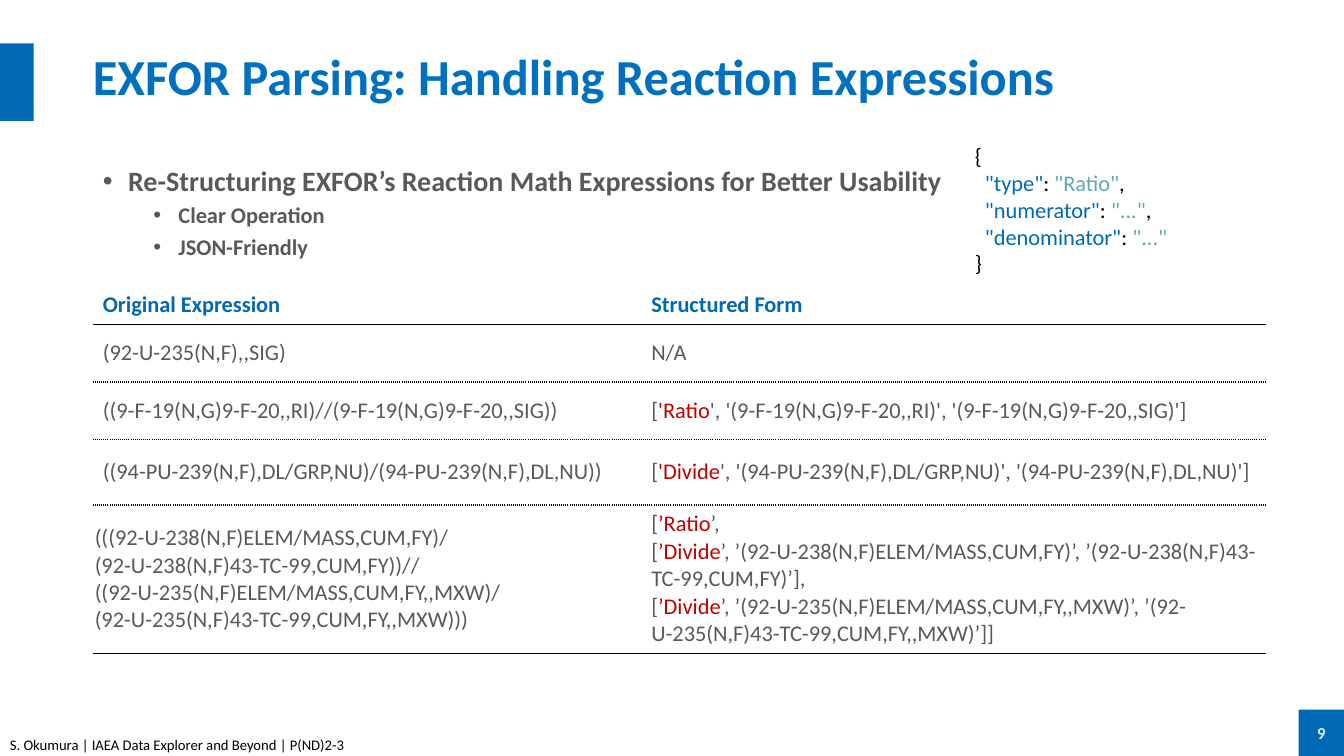
from dataclasses import dataclass

import pptx
import pptx.dml.color
import pptx.enum.shapes
import pptx.enum.text
import pptx.oxml
import pptx.oxml.ns
import pptx.util
from lxml import etree

Inches = pptx.util.Inches
Align = pptx.enum.text.PP_ALIGN
Anchor = pptx.enum.text.MSO_ANCHOR


@dataclass(frozen=True)
class Theme:
    font: str = "Calibri"
    title: str = "0070C0"
    accent: str = "0069B5"
    body: str = "595959"
    black: str = "000000"
    operator: str = "C00000"
    value: str = "63A7AF"
    pale: str = "DBEFF9"
    title_size: float = 36
    lead_size: float = 20
    text_size: float = 16
    number_size: float = 12
    footer_size: float = 10.5


THEME = Theme()
WIDTH, HEIGHT = 13.33, 7.5
LEFT = 0.92


def style_span(span, size, color, bold=False):
    span.font.name = THEME.font
    span.font.size = pptx.util.Pt(size)
    span.font.bold = bold
    span.font.color.rgb = pptx.dml.color.RGBColor.from_string(color)


def write_line(para, text, size, color, bold=False):
    para.text = text
    for span in para.runs:
        style_span(span, size, color, bold)


def write_spans(frame, lines):
    for index, line in enumerate(lines):
        para = frame.add_paragraph() if index else frame.paragraphs[0]
        for text, color in line:
            span = para.add_run()
            span.text = text
            style_span(span, THEME.text_size, color)


def place(shape, box):
    shape.left, shape.top, shape.width, shape.height = map(Inches, box)


def add_block(page, box):
    block = page.shapes.add_shape(
        pptx.enum.shapes.MSO_SHAPE.RECTANGLE, *map(Inches, box))
    block.shadow.inherit = False
    block.fill.solid()
    block.fill.fore_color.rgb = pptx.dml.color.RGBColor.from_string(THEME.accent)
    block.line.fill.background()
    return block


def add_title(page, box, text):
    left, top, width, height = box
    add_block(page, (0, top + 0.14, WIDTH / 40, height - 0.23))
    title = page.shapes.title
    place(title, box)
    frame = title.text_frame
    frame.auto_size = pptx.enum.text.MSO_AUTO_SIZE.NONE
    frame.vertical_anchor = Anchor.MIDDLE
    frame.margin_left = frame.margin_right = 0
    frame.margin_top = frame.margin_bottom = 0
    para = frame.paragraphs[0]
    write_line(para, text, THEME.title_size, THEME.title, True)
    para.alignment = Align.LEFT
    para.line_spacing = 0.9


def add_points(page, box, points):
    body = page.placeholders[1]
    place(body, box)
    frame = body.text_frame
    frame.auto_size = pptx.enum.text.MSO_AUTO_SIZE.NONE
    for index, (level, text) in enumerate(points):
        para = frame.add_paragraph() if index else frame.paragraphs[0]
        para.level = level
        para.line_spacing = 0.9
        para.space_before = pptx.util.Pt(5 if index else 0)
        properties = para._p.get_or_add_pPr()
        properties.set("marL", str(Inches(0.25 + 0.5 * level)))
        properties.set("indent", str(Inches(-0.25)))
        font = etree.SubElement(properties, pptx.oxml.ns.qn("a:buFont"))
        font.set("typeface", "Arial")
        bullet = etree.SubElement(properties, pptx.oxml.ns.qn("a:buChar"))
        bullet.set("char", "•")
        size = THEME.text_size if level else THEME.lead_size
        write_line(para, text, size, THEME.body, True)


def add_json_sample(page, box, fields):
    frame = page.shapes.add_textbox(*map(Inches, box)).text_frame
    frame.word_wrap = True
    lines = [[("{", THEME.black)]]
    for index, (key, value) in enumerate(fields):
        line = [(f'  "{key}"', THEME.accent), (": ", THEME.black),
                (f'"{value}"', THEME.value)]
        if index < len(fields) - 1:
            line.append((",", THEME.black))
        lines.append(line)
    lines.append([("}", THEME.black)])
    write_spans(frame, lines)


def set_borders(cell, top, bottom):
    properties = cell._tc.get_or_add_tcPr()
    sides = (("lnL", None), ("lnR", None), ("lnT", top), ("lnB", bottom))
    for side, dash in sides:
        line = etree.SubElement(properties, pptx.oxml.ns.qn(f"a:{side}"))
        if dash is None:
            etree.SubElement(line, pptx.oxml.ns.qn("a:noFill"))
            continue
        line.set("w", str(pptx.util.Pt(1)))
        fill = etree.SubElement(line, pptx.oxml.ns.qn("a:solidFill"))
        color = etree.SubElement(fill, pptx.oxml.ns.qn("a:srgbClr"))
        color.set("val", THEME.black)
        etree.SubElement(line, pptx.oxml.ns.qn("a:prstDash")).set("val", dash)
    cell.fill.background()


def add_expressions(page, box, columns, heights, header, rows):
    table = page.shapes.add_table(
        len(heights), len(columns), *map(Inches, box)).table
    table.first_row = table.horz_banding = False
    for column, width in zip(table.columns, columns):
        column.width = Inches(width)
    for row, height in zip(table.rows, heights):
        row.height = Inches(height)
    rules = [None, "solid"] + ["sysDot"] * (len(rows) - 1) + ["solid"]
    for index in range(len(heights)):
        for column in range(len(columns)):
            cell = table.cell(index, column)
            set_borders(cell, rules[index], rules[index + 1])
            if index == 0:
                write_line(cell.text_frame.paragraphs[0], header[column],
                           THEME.text_size, THEME.accent, True)
            else:
                cell.vertical_anchor = Anchor.MIDDLE
                write_spans(cell.text_frame, rows[index - 1][column])
    last = table.cell(len(rows), 0)
    last.margin_left = last.margin_right = Inches(0.02)
    last.margin_top = last.margin_bottom = Inches(0.02)


def add_footer(page, box, text, number):
    left, top, width, height = box
    note = page.shapes.add_textbox(
        *map(Inches, (left, HEIGHT - 0.23, 4.5, 0.23))).text_frame
    note.word_wrap = True
    note.vertical_anchor = Anchor.MIDDLE
    write_line(note.paragraphs[0], text, THEME.footer_size, THEME.black)
    badge = add_block(page, (left + width - 0.45, top, 0.45, height)).text_frame
    badge.vertical_anchor = Anchor.MIDDLE
    para = badge.paragraphs[0]
    write_line(para, number, THEME.number_size, THEME.pale, True)
    para.alignment = Align.CENTER


def plain(*lines):
    return [[(line, THEME.body)] for line in lines]


def operation(name, rest):
    return [("[", THEME.body), (name, THEME.operator), (rest, THEME.body)]


def main():
    deck = pptx.Presentation()
    deck.slide_width, deck.slide_height = Inches(WIDTH), Inches(HEIGHT)
    page = deck.slides.add_slide(deck.slide_layouts[1])
    add_title(page, (LEFT, 0.29, 11.49, 1),
              "EXFOR Parsing: Handling Reaction Expressions")
    add_footer(page, (0, 7.04, WIDTH, 0.46),
               "S. Okumura | IAEA Data Explorer and Beyond | P(ND)2-3", "9")
    add_points(page, (LEFT, 1.61, 11.5, 5.15), [
        (0, "Re-Structuring EXFOR’s Reaction Math Expressions for Better Usability"),
        (1, "Clear Operation"),
        (1, "JSON-Friendly")])
    add_json_sample(page, (9.57, 1.36, 3.21, 1.48), [
        ("type", "Ratio"), ("numerator", "..."), ("denominator", "...")])
    rows = [
        (plain("(92-U-235(N,F),,SIG)"), plain("N/A")),
        (plain("((9-F-19(N,G)9-F-20,,RI)//(9-F-19(N,G)9-F-20,,SIG))"),
         [operation("'Ratio", "', '(9-F-19(N,G)9-F-20,,RI)', '(9-F-19(N,G)9-F-20,,SIG)']")]),
        (plain("((94-PU-239(N,F),DL/GRP,NU)/(94-PU-239(N,F),DL,NU))"),
         [operation("'Divide", "', '(94-PU-239(N,F),DL/GRP,NU)', '(94-PU-239(N,F),DL,NU)']")]),
        (plain("(((92-U-238(N,F)ELEM/MASS,CUM,FY)/",
               "(92-U-238(N,F)43-TC-99,CUM,FY))//",
               "((92-U-235(N,F)ELEM/MASS,CUM,FY,,MXW)/",
               "(92-U-235(N,F)43-TC-99,CUM,FY,,MXW)))"),
         [operation("’Ratio", "’,"),
          operation("’Divide", "’, ’(92-U-238(N,F)ELEM/MASS,CUM,FY)’, "
                    "’(92-U-238(N,F)43-TC-99,CUM,FY)’],"),
          operation("’Divide", "’, ’(92-U-235(N,F)ELEM/MASS,CUM,FY,,MXW)’, "
                    "’(92-U-235(N,F)43-TC-99,CUM,FY,,MXW)’]]")])]
    add_expressions(page, (LEFT, 2.84, 11.64, 3.64), (5.44, 6.2),
                    (0.38, 0.57, 0.57, 0.65, 1.47),
                    ("Original Expression", "Structured Form"), rows)
    deck.save("out.pptx")


if __name__ == "__main__":
    main()
